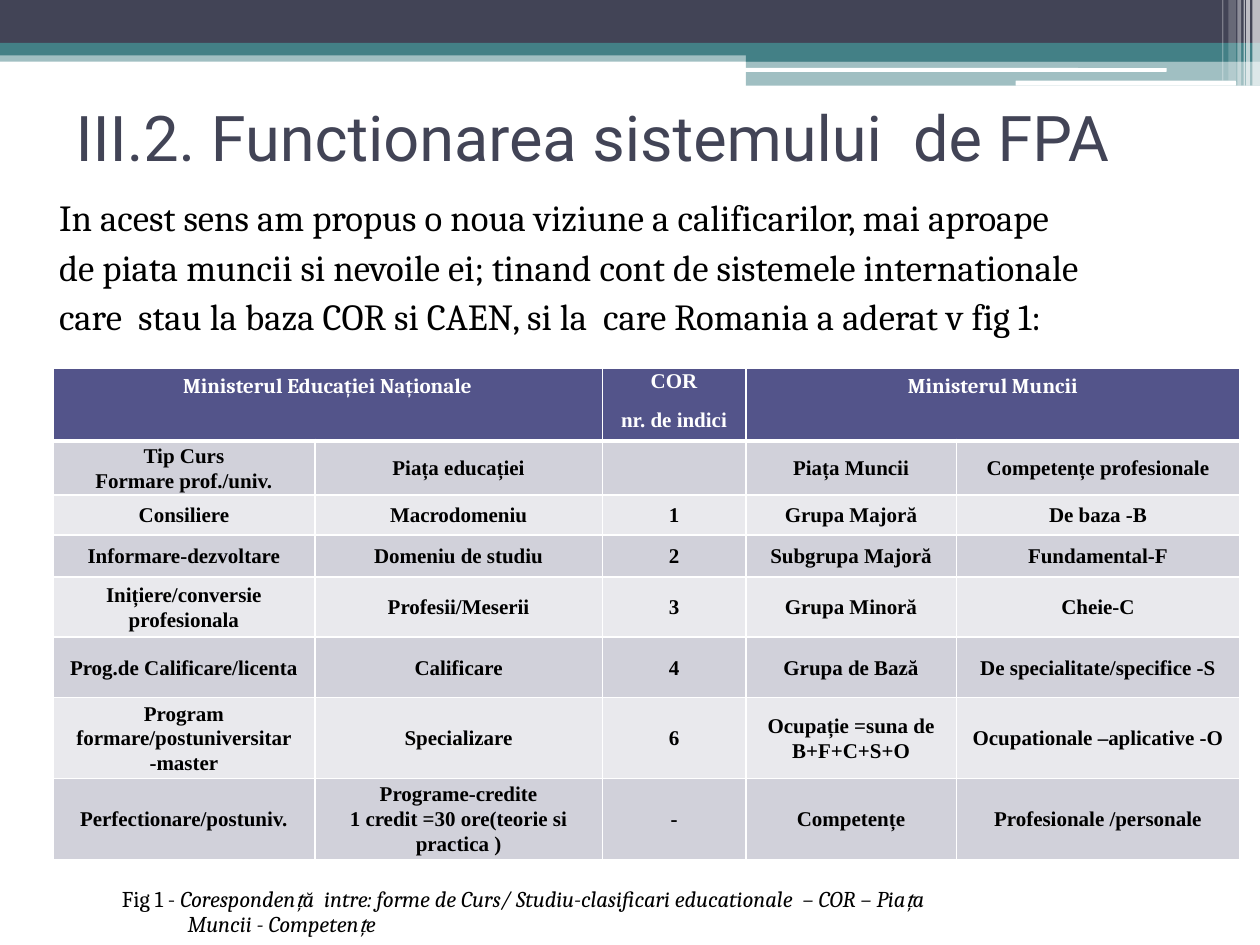
import dataclasses

import pptx
import pptx.dml.color
import pptx.enum.shapes
import pptx.enum.text
import pptx.oxml
import pptx.oxml.ns
import pptx.util

# The slide is a grid of 100 columns by 75 rows
UNIT = pptx.util.Inches(0.1)
COLS, ROWS = 100, 75

COLORS = {
    "white": "FFFFFF", "black": "000000", "slate": "424456", "teal": "438086",
    "header": "53548A", "odd": "D1D1DA", "even": "E9E9ED",
}
LEFT, CENTER = pptx.enum.text.PP_ALIGN.LEFT, pptx.enum.text.PP_ALIGN.CENTER
MIDDLE = pptx.enum.text.MSO_ANCHOR.MIDDLE
RECT = pptx.enum.shapes.MSO_SHAPE.RECTANGLE
ROUND = pptx.enum.shapes.MSO_SHAPE.ROUNDED_RECTANGLE


@dataclasses.dataclass(frozen=True)
class Band:
    col: float
    row: float
    width: float
    height: float
    color: str
    opacity: int = 100
    kind: int = RECT


BANDS = [
    Band(0, 4, 100, 0.9, "teal", 50),
    Band(0, 0, 100, 3.4, "slate"),
    Band(0, 3.4, 100, 1, "teal"),
    Band(59.2, 3.9, 40.8, 1, "teal"),
    Band(59.2, 4.8, 40.8, 2, "teal", 50),
    Band(59.1, 5.4, 33.5, 0.3, "white", kind=ROUND),
    Band(80.6, 6.4, 17.5, 0.4, "white", kind=ROUND),
] + [
    Band(col, 0, width, height, "white", opacity)
    for col, width, height, opacity in [
        (99.4, 0.6, 6.8, 65), (98.9, 0.3, 6.8, 65), (98.7, 0.1, 6.8, 60),
        (98.2, 0.3, 6.8, 40), (97.5, 0.6, 6.4, 20), (97, 0.1, 6.4, 30),
    ]
]

INTRO = [
    "In acest sens am propus o noua viziune a calificarilor, mai aproape",
    "de piata muncii si nevoile ei; tinand cont de sistemele internationale",
    "care  stau la baza COR si CAEN, si la  care Romania a aderat v fig 1:",
]
CAPTION = ("Corespondență  intre: forme de Curs/ Studiu-clasificari educationale"
           "  – COR – Piața\vMuncii - Competențe")

COL_WIDTHS = [20.8, 22.8, 11.4, 16.7, 22.5]
ROW_HEIGHTS = [5.8, 4.2, 3.2, 3.3] + [4.8] * 4
BODY_ROWS = [
    ["Tip Curs\vFormare prof./univ.", "Piața educației", "", "Piața Muncii",
     "Competențe profesionale"],
    ["Consiliere", "Macrodomeniu", "1", "Grupa Majoră", "De baza -B"],
    ["Informare-dezvoltare", "Domeniu de studiu", "2", "Subgrupa Majoră", "Fundamental-F"],
    ["Inițiere/conversie profesionala", "Profesii/Meserii", "3", "Grupa Minoră", "Cheie-C"],
    ["Prog.de Calificare/licenta", "Calificare", "4", "Grupa de Bază",
     "De specialitate/specifice -S"],
    ["Program formare/postuniversitar -master", "Specializare", "6",
     "Ocupație =suna de B+F+C+S+O", "Ocupationale –aplicative -O"],
    ["Perfectionare/postuniv.",
     "Programe-credite\v1 credit =30 ore(teorie si\vpractica )",
     "-", "Competențe", "Profesionale /personale"],
]


def grid(*lengths: float) -> list[int]:
    return [round(n * UNIT) for n in lengths]


def rgb(name: str) -> pptx.dml.color.RGBColor:
    return pptx.dml.color.RGBColor.from_string(COLORS[name])


def add_text(p, text: str, *, size: float, font: str = "Cambria", color: str = "black",
             bold: bool = False, italic: bool = False) -> None:
    """Append formatted text to a paragraph; a vertical tab breaks the line."""
    for i, line in enumerate(text.split("\v")):
        if i:
            p.add_line_break()
        r = p.add_run()
        r.text = line
        r.font.size, r.font.name = pptx.util.Pt(size), font
        r.font.bold, r.font.italic = bold, italic
        r.font.color.rgb = rgb(color)


def format_paragraph(p, *, align=LEFT, before: float = 0, after: float = 0,
                     line: float = 1, margin: float = 0, indent: float = 0) -> None:
    p.alignment, p.line_spacing = align, line
    p.space_before, p.space_after = pptx.util.Pt(before), pptx.util.Pt(after)
    if margin:
        left, first = grid(margin, indent)
        p._p.get_or_add_pPr().set("marL", str(left))
        p._p.get_or_add_pPr().set("indent", str(first))


def add_paragraphs(tf, count: int) -> list:
    return [tf.paragraphs[0]] + [tf.add_paragraph() for _ in range(count - 1)]


def add_band(s, band: Band) -> None:
    sp = s.shapes.add_shape(band.kind, *grid(band.col, band.row, band.width, band.height))
    sp.shadow.inherit = False
    sp.line.fill.background()
    sp.fill.solid()
    sp.fill.fore_color.rgb = rgb(band.color)
    if band.opacity < 100:
        clr = sp._element.spPr.find(".//" + pptx.oxml.ns.qn("a:srgbClr"))
        clr.append(pptx.oxml.parse_xml(
            f'<a:alpha {pptx.oxml.ns.nsdecls("a")} val="{band.opacity * 1000}"/>'))


def add_box(s, *box: float):
    tf = s.shapes.add_textbox(*grid(*box)).text_frame
    tf.word_wrap = True
    return tf


def style_cell(cell, fill: str, top: float = 1, bottom: float = 1) -> None:
    """Fill a cell and give it white borders, with widths in points."""
    cell.fill.solid()
    cell.fill.fore_color.rgb = rgb(fill)
    borders = {"lnL": 1, "lnR": 1, "lnT": top, "lnB": bottom}
    for i, (tag, width) in enumerate(borders.items()):
        cell._tc.get_or_add_tcPr().insert(i, pptx.oxml.parse_xml(
            f'<a:{tag} {pptx.oxml.ns.nsdecls("a")} w="{pptx.util.Pt(width)}"><a:solidFill>'
            f'<a:srgbClr val="{COLORS["white"]}"/></a:solidFill></a:{tag}>'))


def fill_cell(cell, lines: list[str], *, margin: float | None = None, anchor=None,
              color: str = "black", font: str = "Times New Roman") -> None:
    """Write centred bold lines; a side margin also removes the top and bottom ones."""
    spaced = margin is not None
    if spaced:
        cell.margin_left = cell.margin_right = grid(margin)[0]
        cell.margin_top = cell.margin_bottom = 0
    if anchor is not None:
        cell.vertical_anchor = anchor
    for p, text in zip(add_paragraphs(cell.text_frame, len(lines)), lines):
        format_paragraph(p, align=CENTER, line=1.07 if spaced else 1, after=8 if spaced else 0)
        if text:
            add_text(p, text, size=12, font=font, color=color, bold=True)


def add_correspondence_table(s) -> None:
    table = s.shapes.add_table(
        len(ROW_HEIGHTS), len(COL_WIDTHS),
        *grid(4.2, 29.2, sum(COL_WIDTHS), sum(ROW_HEIGHTS))).table
    for column, width in zip(table.columns, grid(*COL_WIDTHS)):
        column.width = width
    for row, height in zip(table.rows, grid(*ROW_HEIGHTS)):
        row.height = height

    for c in range(len(COL_WIDTHS)):
        style_cell(table.cell(0, c), "header", bottom=3)
    for c, title in [(0, "Ministerul Educației Naționale"), (3, "Ministerul Muncii")]:
        table.cell(0, c).merge(table.cell(0, c + 1))
        fill_cell(table.cell(0, c), [title], color="white", font="Cambria")
    fill_cell(table.cell(0, 2), ["COR", "nr. de indici"], margin=1.2, color="white")

    for r, texts in enumerate(BODY_ROWS, start=1):
        for c, text in enumerate(texts):
            cell = table.cell(r, c)
            style_cell(cell, "odd" if r % 2 else "even", top=3 if r == 1 else 1)
            fill_cell(cell, [text], margin=0.7, anchor=MIDDLE)


def main() -> None:
    prs = pptx.Presentation()
    prs.slide_width, prs.slide_height = grid(COLS, ROWS)
    s = prs.slides.add_slide(prs.slide_layouts[5])
    for band in BANDS:
        add_band(s, band)

    title = s.shapes.title
    title.left, title.top, title.width, title.height = grid(5, 6.7, 92.5, 8.3)
    title.text_frame.vertical_anchor = MIDDLE
    p = title.text_frame.paragraphs[0]
    format_paragraph(p)
    add_text(p, "III.2. Functionarea sistemului  de FPA", size=36, font="Roboto", color="slate")

    tf = add_box(s, 2.5, 15, 92.5, 56.7)
    for p, text in zip(add_paragraphs(tf, len(INTRO)), INTRO):
        format_paragraph(p, before=3, margin=4, indent=-2.8)
        add_text(p, text, size=21)

    p = add_box(s, 7.5, 70, 80, 5).paragraphs[0]
    format_paragraph(p, before=3, line=0.9, margin=6.4, indent=-5.2)
    add_text(p, "Fig 1 - ", size=12.9)
    add_text(p, CAPTION, size=12.9, italic=True)

    add_correspondence_table(s)
    prs.save("out.pptx")


if __name__ == "__main__":
    main()
